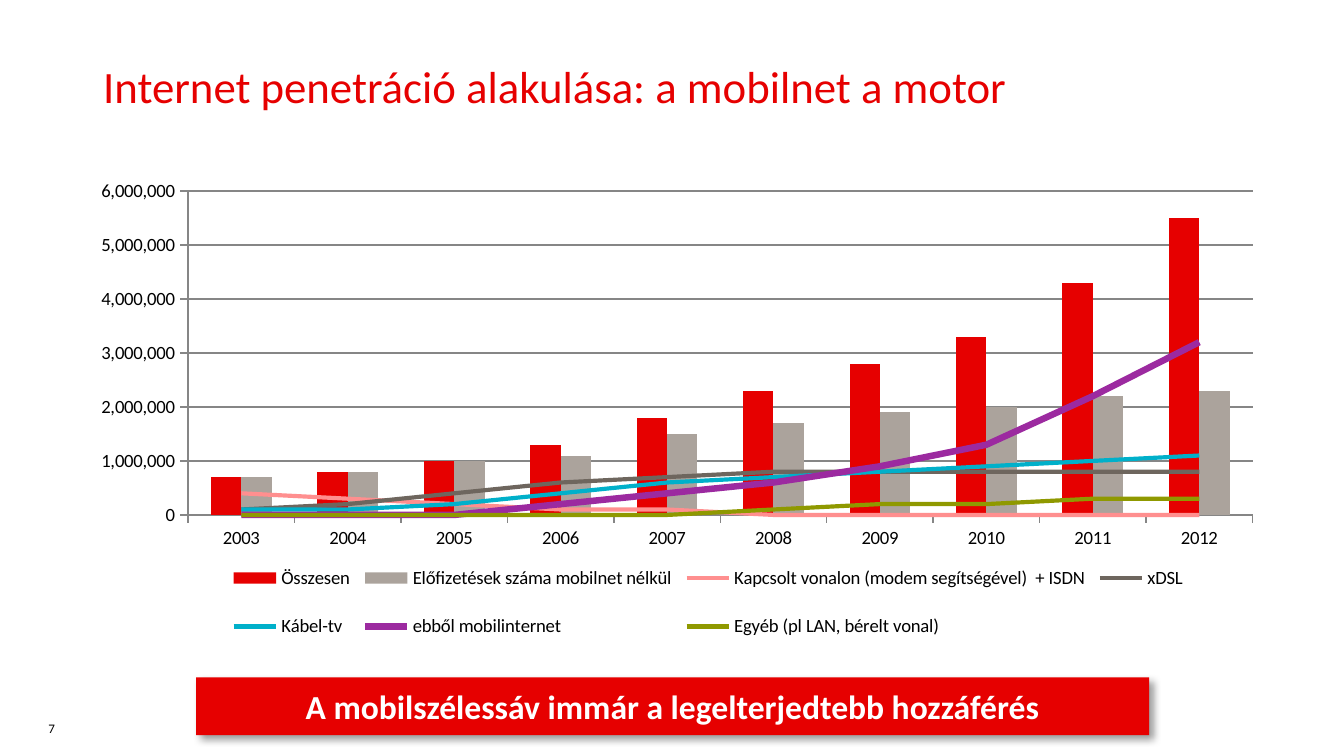
from dataclasses import dataclass

from lxml.etree import SubElement
from pptx import Presentation
from pptx.chart.data import CategoryChartData
from pptx.dml.color import RGBColor
from pptx.enum.chart import XL_CHART_TYPE, XL_LEGEND_POSITION, XL_TICK_MARK
from pptx.enum.shapes import MSO_SHAPE
from pptx.enum.text import MSO_ANCHOR, PP_ALIGN
from pptx.oxml import parse_xml
from pptx.oxml.ns import nsdecls, qn
from pptx.util import Inches, Pt


@dataclass(frozen=True)
class Theme:
    font: str = "Calibri"
    red: str = "E60000"
    black: str = "000000"
    white: str = "FFFFFF"
    grid: str = "868686"
    title_size: float = 24
    banner_size: float = 18
    chart_size: float = 10
    number_size: float = 7


@dataclass(frozen=True)
class Series:
    name: str
    values: tuple
    color: str
    brightness: float = 0
    width: float = 2.25


THEME = Theme()
UNIT = 100000
YEARS = [str(year) for year in range(2003, 2013)]
COLUMNS = [
    Series("Összesen", (7, 8, 10, 13, 18, 23, 28, 33, 43, 55), THEME.red),
    Series("Előfizetések száma mobilnet nélkül",
           (7, 8, 10, 11, 15, 17, 19, 20, 22, 23), "82786F", 0.32),
]
LINES = [
    Series("Kapcsolt vonalon (modem segítségével)\u00a0 + ISDN",
           (4, 3, 2, 1, 1, 0, 0, 0, 0, 0), "FF8F8F"),
    Series("xDSL", (1, 2, 4, 6, 7, 8, 8, 8, 8, 8), "82786F", -0.15),
    Series("Kábel-tv", (1, 1, 2, 4, 6, 7, 8, 9, 10, 11), "00B0CA"),
    Series("ebből mobilinternet", (0, 0, 0, 2, 4, 6, 9, 13, 22, 32), "9C2AA0", width=3.5),
    Series("Egyéb (pl LAN, bérelt vonal)", (0, 0, 0, 0, 0, 1, 2, 2, 3, 3), "A8B400", -0.15),
]


def box(left, top, width, height):
    return [Inches(length) for length in (left, top, width, height)]


def write(shape, text, size, color, anchor, bold=False, align=PP_ALIGN.LEFT):
    frame = shape.text_frame
    frame.word_wrap = True
    frame.vertical_anchor = anchor
    paragraph = frame.paragraphs[0]
    paragraph.alignment = align
    run = paragraph.add_run()
    run.text = text
    run.font.name = THEME.font
    run.font.size = Pt(size)
    run.font.bold = bold
    run.font.color.rgb = RGBColor.from_string(color)


def add_text(slide, place, text, size, color, anchor, inset=None):
    shape = slide.shapes.add_textbox(*place)
    write(shape, text, size, color, anchor)
    if inset is not None:
        frame = shape.text_frame
        frame.margin_left = frame.margin_right = inset
        frame.margin_top = frame.margin_bottom = inset


def add_banner(slide, place, text):
    shape = slide.shapes.add_shape(MSO_SHAPE.RECTANGLE, *place)
    shape.fill.solid()
    shape.fill.fore_color.rgb = RGBColor.from_string(THEME.red)
    shape.line.fill.background()
    shape.shadow.inherit = False
    effects = shape._element.spPr.find(qn("a:effectLst"))
    shadow = SubElement(effects, qn("a:outerShdw"), blurRad=str(Pt(4)),
                        dist=str(Pt(3)), dir=str(45 * 60000), algn="tl", rotWithShape="0")
    color = SubElement(shadow, qn("a:srgbClr"), val=THEME.black)
    SubElement(color, qn("a:alpha"), val="40000")
    write(shape, text, THEME.banner_size, THEME.white, MSO_ANCHOR.MIDDLE, True, PP_ALIGN.CENTER)


def set_layout(parent, index, left, top, width, height, inner=False):
    for old in parent.findall(qn("c:layout")):
        parent.remove(old)
    layout = parse_xml(f"<c:layout {nsdecls('c')}/>")
    manual = SubElement(layout, qn("c:manualLayout"))
    if inner:
        SubElement(manual, qn("c:layoutTarget"), val="inner")
    for tag in ("xMode", "yMode"):
        SubElement(manual, qn(f"c:{tag}"), val="edge")
    for tag, value in zip("xywh", (left, top, width, height)):
        SubElement(manual, qn(f"c:{tag}"), val=str(value))
    parent.insert(index, layout)


def move_to_lines(chart):
    bars = chart._chartSpace.find(f".//{qn('c:barChart')}")
    lines = parse_xml(f"<c:lineChart {nsdecls('c')}/>")
    SubElement(lines, qn("c:grouping"), val="standard")
    SubElement(lines, qn("c:varyColors"), val="0")
    for series in bars.findall(qn("c:ser"))[len(COLUMNS):]:
        for flag in series.findall(qn("c:invertIfNegative")):
            series.remove(flag)
        lines.append(series)
    SubElement(lines, qn("c:marker"), val="1")
    for axis in bars.findall(qn("c:axId")):
        SubElement(lines, qn("c:axId"), val=axis.get("val"))
    bars.addnext(lines)


def paint(color, series):
    color.rgb = RGBColor.from_string(series.color)
    if series.brightness:
        color.brightness = series.brightness


def style_series(chart):
    column_plot, line_plot = chart.plots
    column_plot.vary_by_categories = False
    column_plot.gap_width = 150
    column_plot.overlap = 0
    for drawn, series in zip(column_plot.series, COLUMNS):
        drawn.format.fill.solid()
        paint(drawn.format.fill.fore_color, series)
    for drawn, series in zip(line_plot.series, LINES):
        drawn.smooth = False
        drawn.marker.format.fill.background()
        symbol = drawn._element.find(qn("c:marker"))
        symbol.insert(0, parse_xml(f"<c:symbol {nsdecls('c')} val='none'/>"))
        drawn.format.line.width = Pt(series.width)
        paint(drawn.format.line.color, series)


def style_axes(chart):
    values = chart.value_axis
    values.minimum_scale = 0
    values.maximum_scale = 60 * UNIT
    values.major_unit = 10 * UNIT
    values.has_major_gridlines = True
    values.tick_labels.number_format = "#,##0"
    values.tick_labels.number_format_is_linked = False
    for axis in (values, chart.category_axis):
        axis.major_tick_mark = XL_TICK_MARK.OUTSIDE
    for part in (values, chart.category_axis, values.major_gridlines):
        part.format.line.color.rgb = RGBColor.from_string(THEME.grid)


def add_chart(slide, place):
    data = CategoryChartData(number_format="#,##0")
    data.categories = YEARS
    for series in COLUMNS + LINES:
        data.add_series(series.name, [value * UNIT for value in series.values])
    chart = slide.shapes.add_chart(XL_CHART_TYPE.COLUMN_CLUSTERED, *place, data).chart
    chart.has_title = False
    chart.font.name = THEME.font
    chart.font.size = Pt(THEME.chart_size)
    chart.font.color.rgb = RGBColor.from_string(THEME.black)
    chart.has_legend = True
    chart.legend.position = XL_LEGEND_POSITION.BOTTOM
    chart.legend.include_in_layout = False
    move_to_lines(chart)
    style_series(chart)
    style_axes(chart)
    set_layout(chart._chartSpace.find(f".//{qn('c:plotArea')}"), 0, 0.1, 0.03, 0.88, 0.65, True)
    set_layout(chart.legend._element, 1, 0.13, 0.73, 0.8, 0.25)


def main():
    presentation = Presentation()
    presentation.slide_width = Inches(10)
    presentation.slide_height = Inches(10 * 9 / 16)
    slide = presentation.slides.add_slide(presentation.slide_layouts[6])
    add_text(slide, box(0.36, 5.2, 0.22, 0.28), "7", THEME.number_size,
             THEME.black, MSO_ANCHOR.BOTTOM, 0)
    add_text(slide, box(0.67, 0.39, 8.86, 0.55),
             "Internet penetráció alakulása: a mobilnet a motor",
             THEME.title_size, THEME.red, MSO_ANCHOR.TOP)
    add_chart(slide, box(0.5, 1.31, 9, 3.71))
    add_banner(slide, box(1.46, 5.04, 7.09, 0.43),
               "A mobilszélessáv immár a legelterjedtebb hozzáférés")
    presentation.save("out.pptx")


if __name__ == "__main__":
    main()
